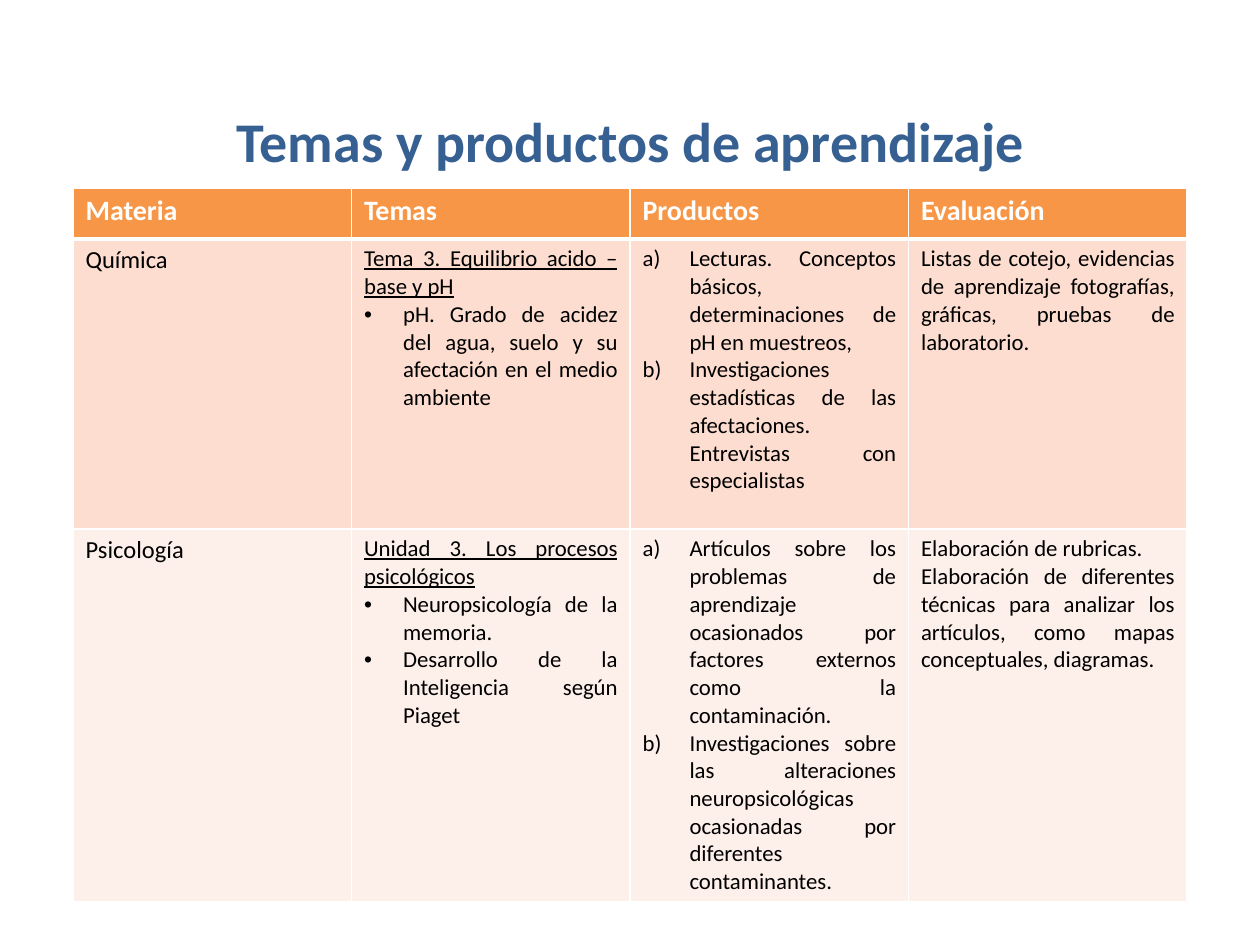
from lxml.etree import SubElement
from pptx import Presentation
from pptx.dml.color import RGBColor
from pptx.enum.shapes import MSO_SHAPE as Shape
from pptx.enum.text import MSO_ANCHOR as Anchor, PP_ALIGN as Align
from pptx.oxml import parse_xml
from pptx.oxml.ns import nsdecls, qn
from pptx.util import Emu, Pt

# Content: each body paragraph is (style, text)
TITLE = "Temas y productos de aprendizaje"
HEADERS = ["Materia", "Temas", "Productos", "Evaluación"]
ROWS = [
    [
        [("subject", "Química")],
        [("topic", "Tema 3. Equilibrio acido –base y pH"),
         ("bullet", "pH. Grado de acidez del agua, suelo y su afectación en el "
                    "medio ambiente")],
        [("letter", "Lecturas. Conceptos básicos, determinaciones de pH en muestreos,"),
         ("letter", "Investigaciones estadísticas de las afectaciones. Entrevistas "
                    "con especialistas")],
        [("plain", "Listas de cotejo, evidencias de aprendizaje fotografías, "
                   "gráficas, pruebas de laboratorio.")],
    ],
    [
        [("subject", "Psicología")],
        [("topic", "Unidad 3. Los procesos psicológicos"),
         ("bullet", "Neuropsicología de la memoria."),
         ("bullet", "Desarrollo de la Inteligencia según Piaget")],
        [("letter", "Artículos sobre los problemas de aprendizaje ocasionados por "
                    "factores externos como la contaminación."),
         ("letter", "Investigaciones sobre las alteraciones neuropsicológicas "
                    "ocasionadas por diferentes contaminantes.")],
        [("plain", "Elaboración de rubricas."),
         ("plain", "Elaboración de diferentes técnicas para analizar los artículos, "
                   "como mapas conceptuales, diagramas.")],
    ],
]

# Look
FONT = "Calibri"
WHITE = RGBColor(0xFF, 0xFF, 0xFF)
BLACK = RGBColor(0x00, 0x00, 0x00)
BLUE = RGBColor(0x37, 0x60, 0x92)
ORANGE = RGBColor(0xF7, 0x96, 0x46)
ROW_FILLS = [RGBColor(0xFC, 0xDD, 0xCF), RGBColor(0xFD, 0xEF, 0xE9)]
SIZES = {"header": 16, "subject": 14}
BODY_SIZE = 13
# Marker element, its attributes and the hanging indent in px
MARKERS = {
    "bullet": ("a:buChar", {"char": "•"}, 39),
    "letter": ("a:buAutoNum", {"type": "alphaLcParenR"}, 47),
}

# Layout in px
SLIDE = (1260, 945)
TITLE_BOX = (115, 96, 1032, 89)
TABLE_LEFT, TABLE_TOP, COLUMN_WIDTH = 73, 188, 278.5
ROW_HEIGHTS = [51, 290, 372]


def px(value):
    return Emu(round(value * 914400 / 126))


def set_font(para, size, color, bold=False):
    for span in para.runs:
        span.font.name = FONT
        span.font.size = Pt(size)
        span.font.bold = bold
        span.font.color.rgb = color


def add_marker(para, style):
    tag, attributes, indent = MARKERS[style]
    properties = para._p.get_or_add_pPr()
    properties.set("marL", str(px(indent)))
    properties.set("indent", str(-px(indent)))
    if style == "bullet":
        SubElement(properties, qn("a:buFont"), typeface="Arial")
    SubElement(properties, qn(tag), attributes)


def set_borders(cell, top, bottom):
    properties = cell._tc.get_or_add_tcPr()
    widths = [("L", 1), ("R", 1), ("T", top), ("B", bottom)]
    for index, (side, width) in enumerate(widths):
        properties.insert(index, parse_xml(
            f'<a:ln{side} {nsdecls("a")} w="{Pt(width)}"><a:solidFill>'
            f'<a:srgbClr val="{WHITE}"/></a:solidFill></a:ln{side}>'))


def fill_cell(cell, paragraphs, fill, color):
    cell.fill.solid()
    cell.fill.fore_color.rgb = fill
    frame = cell.text_frame
    frame.text = "\n".join(text for _, text in paragraphs)
    for para, (style, _) in zip(frame.paragraphs, paragraphs):
        para.alignment = Align.JUSTIFY
        if style in MARKERS:
            add_marker(para, style)
        set_font(para, SIZES.get(style, BODY_SIZE), color, style == "header")
        if style == "topic":
            para.runs[0].font.underline = True


def add_title(page):
    box = page.shapes.add_shape(Shape.ROUNDED_RECTANGLE, *map(px, TITLE_BOX))
    box.shadow.inherit = False
    box.fill.solid()
    box.fill.fore_color.rgb = WHITE
    box.line.fill.background()
    frame = box.text_frame
    frame.word_wrap = True
    frame.vertical_anchor = Anchor.MIDDLE
    frame.text = TITLE
    frame.paragraphs[0].alignment = Align.CENTER
    set_font(frame.paragraphs[0], 32, BLUE, bold=True)


def add_topics_table(page):
    rows = [[[("header", name)] for name in HEADERS]] + ROWS
    table = page.shapes.add_table(
        len(rows), len(HEADERS), px(TABLE_LEFT), px(TABLE_TOP),
        px(COLUMN_WIDTH * len(HEADERS)), px(sum(ROW_HEIGHTS))).table
    for column in table.columns:
        column.width = px(COLUMN_WIDTH)
    fills = [ORANGE] + ROW_FILLS
    for r, (row, height, fill) in enumerate(zip(rows, ROW_HEIGHTS, fills)):
        table.rows[r].height = px(height)
        for c, paragraphs in enumerate(row):
            cell = table.cell(r, c)
            fill_cell(cell, paragraphs, fill, BLACK if r else WHITE)
            # The rule under the header is thicker
            set_borders(cell, top=3 if r == 1 else 1, bottom=1 if r else 3)


def main():
    deck = Presentation()
    deck.slide_width, deck.slide_height = map(px, SLIDE)
    page = deck.slides.add_slide(deck.slide_layouts[6])
    add_title(page)
    add_topics_table(page)
    deck.save("out.pptx")


if __name__ == "__main__":
    main()
